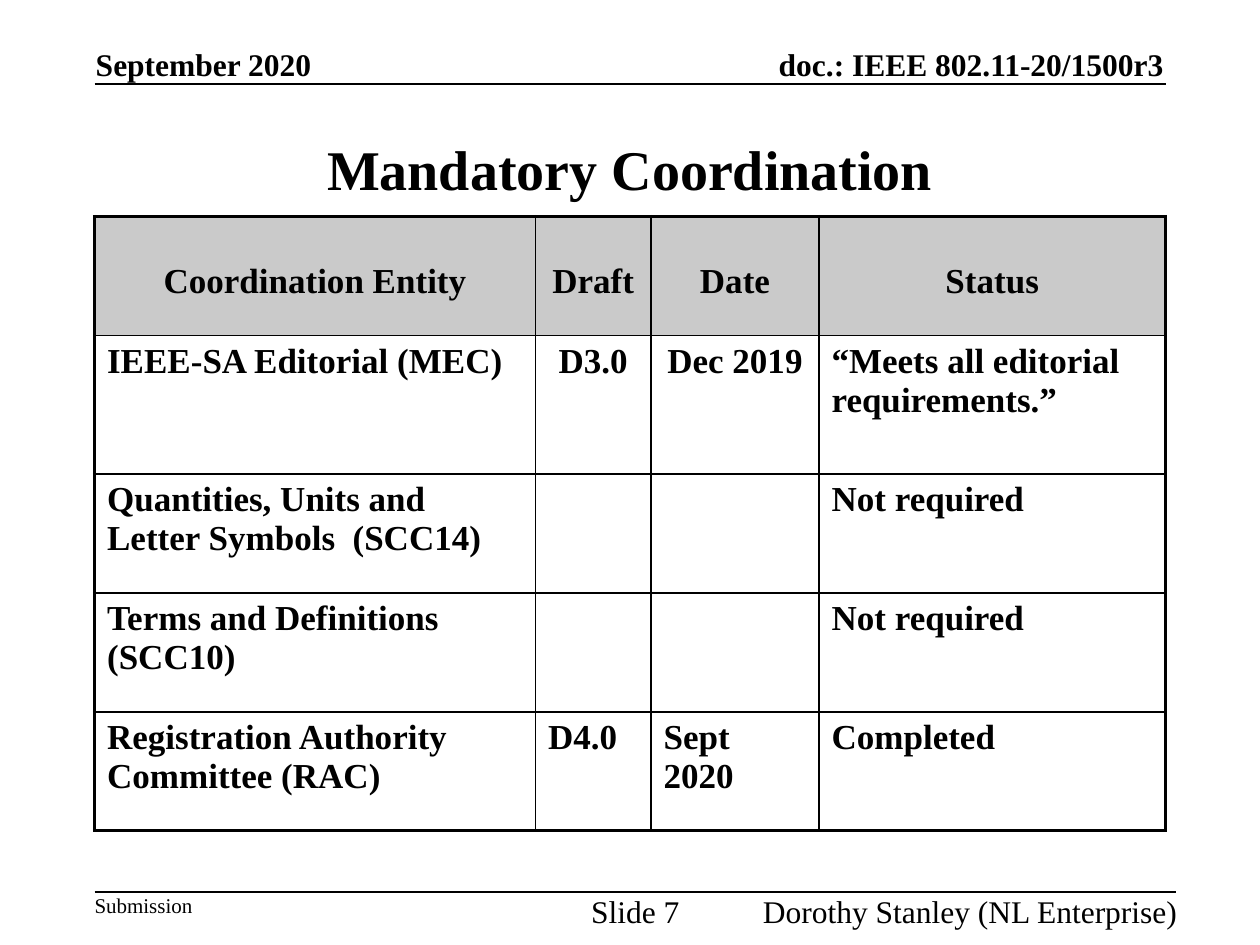
from typing import NamedTuple

from lxml import etree
from pptx import Presentation
from pptx.dml.color import RGBColor
from pptx.enum.shapes import MSO_CONNECTOR
from pptx.enum.text import MSO_ANCHOR, MSO_AUTO_SIZE, PP_ALIGN
from pptx.oxml.ns import qn
from pptx.util import Pt

LEFT, MID, RIGHT = PP_ALIGN.LEFT, PP_ALIGN.CENTER, PP_ALIGN.RIGHT
TOP, CENTER, BOTTOM = MSO_ANCHOR.TOP, MSO_ANCHOR.MIDDLE, MSO_ANCHOR.BOTTOM
FIT, STRAIGHT = MSO_AUTO_SIZE.SHAPE_TO_FIT_TEXT, MSO_CONNECTOR.STRAIGHT
BLACK = RGBColor(0x00, 0x00, 0x00)
GRAY = RGBColor(0x96, 0x96, 0x96)
FACE = "Times New Roman"
THIN, THICK = 1, 2.25


class Label(NamedTuple):
    text: str
    x: float
    y: float
    w: float
    h: float
    size: float
    align: PP_ALIGN = LEFT
    anchor: MSO_ANCHOR = TOP
    bold: bool = False
    wrap: bool = False


class Rule(NamedTuple):
    x: float
    y: float
    end: float


class Entry(NamedTuple):
    name: str
    draft: str
    date: str
    status: str
    align: PP_ALIGN = LEFT  # of draft and date


LABELS = [
    Label("doc.: IEEE 802.11-20/1500r3", 397.2, 26, 267.8, 21.6, 18,
          RIGHT, BOTTOM, True),
    Label("September 2020", 54.7, 26, 132, 21.6, 18, LEFT, BOTTOM, True),
    Label("Mandatory Coordination", 54, 54, 612, 84, 32, MID, CENTER, True, True),
    Label("Submission", 54, 509.8, 60, 14.4, 12),
    Label("Slide 7", 328, 509.8, 70, 21.6, 18, MID),
    Label("Dorothy Stanley (NL Enterprise)", 422.8, 509.8, 250, 21.6, 18, RIGHT),
]
RULES = [Rule(54, 48, 666), Rule(54, 509.8, 672)]
HEADS = ("Coordination Entity", "Draft", "Date", "Status")
ENTRIES = [
    Entry("IEEE-SA Editorial (MEC)", "D3.0", "Dec 2019",
          "“Meets all editorial requirements.”", MID),
    Entry("Quantities, Units and Letter Symbols  (SCC14)", "", "", "Not required"),
    Entry("Terms and Definitions (SCC10)", "", "", "Not required"),
    Entry("Registration Authority Committee (RAC)", "D4.0", "Sept 2020",
          "Completed"),
]
WIDTHS = (252, 66, 96, 198)
HEIGHTS = (68, 79.2, 67.9, 67.9, 67.9)
PAD = 3.6
DROP = 26  # header text sits one line lower


def style(para, size: float, align: PP_ALIGN, bold: bool) -> None:
    para.alignment = align
    font = para.font
    font.name, font.size, font.bold = FACE, Pt(size), bold
    font.color.rgb = BLACK


def add_label(slide, item: Label) -> None:
    box = slide.shapes.add_textbox(Pt(item.x), Pt(item.y), Pt(item.w), Pt(item.h))
    frame = box.text_frame
    frame.word_wrap = item.wrap
    frame.vertical_anchor = item.anchor
    if not item.wrap:
        frame.auto_size = FIT
        frame.margin_left = frame.margin_right = 0
        frame.margin_top = frame.margin_bottom = 0
    frame.text = item.text
    style(frame.paragraphs[0], item.size, item.align, item.bold)


def add_rule(slide, item: Rule) -> None:
    line = slide.shapes.add_connector(
        STRAIGHT, Pt(item.x), Pt(item.y), Pt(item.end), Pt(item.y))
    line.line.color.rgb = BLACK
    line.line.width = Pt(THIN)
    etree.SubElement(line._element.spPr, qn("a:effectLst"))


def add_edge(cell, side: str, width: float) -> None:
    props = cell._tc.get_or_add_tcPr()
    edge = etree.SubElement(props, qn(f"a:ln{side}"), w=str(Pt(width)))
    fill = etree.SubElement(edge, qn("a:solidFill"))
    etree.SubElement(fill, qn("a:srgbClr"), val=str(BLACK))


def fill_cell(cell, text: str, align: PP_ALIGN, head: bool) -> None:
    cell.margin_top = Pt(DROP if head else PAD)
    cell.margin_bottom = Pt(PAD)
    cell.text = text
    style(cell.text_frame.paragraphs[0], 20, align, True)
    if head:
        cell.fill.solid()
        cell.fill.fore_color.rgb = GRAY
        tint = cell._tc.tcPr.find(f"{qn('a:solidFill')}/{qn('a:srgbClr')}")
        etree.SubElement(tint, qn("a:alpha"), val="50000")
    else:
        cell.fill.background()


def add_grid(slide) -> None:
    frame = slide.shapes.add_table(
        len(HEIGHTS), len(WIDTHS), Pt(54), Pt(123.8),
        Pt(sum(WIDTHS)), Pt(sum(HEIGHTS)))
    table = frame.table
    table.first_row = table.horz_banding = False
    for col, width in zip(table.columns, WIDTHS):
        col.width = Pt(width)
    for row, height in zip(table.rows, HEIGHTS):
        row.height = Pt(height)

    rows = [(HEADS, (MID,) * 4)]
    rows += [(e[:4], (LEFT, e.align, e.align, LEFT)) for e in ENTRIES]
    for r, (texts, aligns) in enumerate(rows):
        for c, (text, align) in enumerate(zip(texts, aligns)):
            cell = table.cell(r, c)
            outer = {"L": c == 0, "R": c == len(WIDTHS) - 1,
                     "T": r == 0, "B": r == len(HEIGHTS) - 1}
            for side, thick in outer.items():
                add_edge(cell, side, THICK if thick else THIN)
            fill_cell(cell, text, align, r == 0)


def main() -> None:
    deck = Presentation()
    deck.slide_width, deck.slide_height = Pt(720), Pt(540)
    slide = deck.slides.add_slide(deck.slide_layouts[6])

    # Header and footer rules
    for rule in RULES:
        add_rule(slide, rule)
    # Title, header and footer text
    for label in LABELS:
        add_label(slide, label)
    # Coordination table
    add_grid(slide)

    deck.save("out.pptx")


if __name__ == "__main__":
    main()
